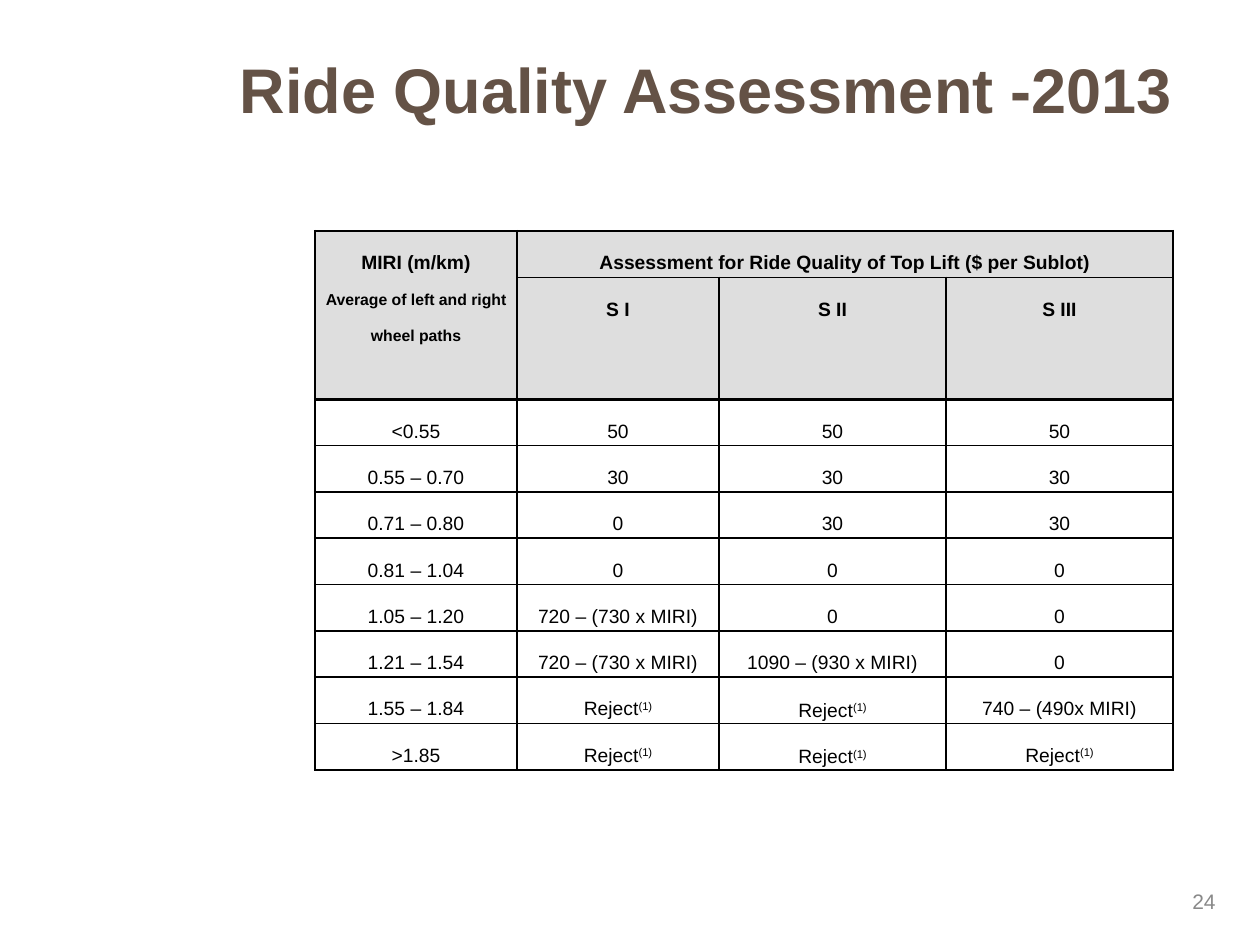
from lxml import etree
from pptx import Presentation
from pptx import util as u
from pptx.dml.color import RGBColor
from pptx.enum import text
from pptx.oxml.ns import qn

PX = 914400 / 126
FONT = "Arial"
BLACK = "000000"
COLUMNS = [202, 202, 227, 227]
ROWS = [46, 76] + [46] * 8
HEADER_ROWS = 2
REJECT = "Reject"
RATES = [
    ["<0.55", "50", "50", "50"],
    ["0.55 – 0.70", "30", "30", "30"],
    ["0.71 – 0.80", "0", "30", "30"],
    ["0.81 – 1.04", "0", "0", "0"],
    ["1.05 – 1.20", "720 – (730 x MIRI)", "0", "0"],
    ["1.21 – 1.54", "720 – (730 x MIRI)", "1090 – (930 x MIRI)", "0"],
    ["1.55 – 1.84", REJECT, REJECT, "740 – (490x MIRI)"],
    [">1.85", REJECT, REJECT, REJECT],
]


def px(value):
    return u.Emu(round(value * PX))


def colour(value):
    return RGBColor.from_string(value)


def add_span(para, words, size, ink=BLACK, bold=False):
    span = para.add_run()
    span.text = words
    span.font.name = FONT
    span.font.size = u.Pt(size)
    span.font.bold = bold
    span.font.color.rgb = colour(ink)
    return span


def place(shape, left, top, width, height):
    shape.left, shape.top = px(left), px(top)
    shape.width, shape.height = px(width), px(height)


def add_title(page, words):
    title = page.shapes.title
    place(title, 231, 38, 998, 158)
    frame = title.text_frame
    frame.word_wrap = True
    frame.auto_size = text.MSO_AUTO_SIZE.NONE
    frame.vertical_anchor = text.MSO_ANCHOR.TOP
    frame.margin_left = px(9)
    frame.margin_top = px(13)
    para = frame.paragraphs[0]
    para.alignment = text.PP_ALIGN.LEFT
    add_span(para, words, 36, "645246", True)


def add_page_number(page, number):
    box = page.shapes.add_textbox(px(1081), px(876), px(147), px(50))
    frame = box.text_frame
    frame.word_wrap = True
    frame.vertical_anchor = text.MSO_ANCHOR.MIDDLE
    para = frame.paragraphs[0]
    para.alignment = text.PP_ALIGN.RIGHT
    add_span(para, number, 12, "898989")


def set_borders(cell, row, column):
    """Heavy lines run round the table and below its header."""
    last_row = row + (cell.span_height - 1 if cell.is_merge_origin else 0)
    last_column = column + (cell.span_width - 1 if cell.is_merge_origin else 0)
    heavy = {
        "a:lnL": column == 0,
        "a:lnR": last_column == len(COLUMNS) - 1,
        "a:lnT": row in (0, HEADER_ROWS),
        "a:lnB": last_row in (HEADER_ROWS - 1, len(ROWS) - 1),
    }
    properties = cell._tc.get_or_add_tcPr()
    for tag, is_heavy in heavy.items():
        width = u.Pt(1.5 if is_heavy else 1)
        line = etree.SubElement(properties, qn(tag), w=str(int(width)))
        fill = etree.SubElement(line, qn("a:solidFill"))
        etree.SubElement(fill, qn("a:srgbClr"), val=BLACK)


def set_fill(cell, is_header):
    if not is_header:
        cell.fill.background()
        return
    cell.fill.solid()
    cell.fill.fore_color.rgb = colour("808080")
    shade = cell._tc.tcPr.find(".//" + qn("a:solidFill") + "[last()]")
    shade = cell._tc.tcPr.findall(qn("a:solidFill"))[0]
    etree.SubElement(shade[0], qn("a:alpha"), val="26000")


def cell_para(cell, centred=False):
    cell.margin_left = cell.margin_right = px(9)
    cell.margin_top = cell.margin_bottom = 0
    para = cell.text_frame.paragraphs[0]
    para.alignment = text.PP_ALIGN.CENTER
    para.line_spacing = 2.0
    if centred:
        cell.vertical_anchor = text.MSO_ANCHOR.MIDDLE
    else:
        para.space_before = para.space_after = u.Pt(4.8)
    return para


def fill_header(table):
    table.cell(0, 0).merge(table.cell(1, 0))
    table.cell(0, 1).merge(table.cell(0, 3))
    para = cell_para(table.cell(0, 0))
    add_span(para, "MIRI (m/km)", 11, bold=True)
    para.add_line_break()
    add_span(para, "Average of left and right wheel paths", 9, bold=True)
    heading = "Assessment for Ride Quality of Top Lift ($ per Sublot)"
    add_span(cell_para(table.cell(0, 1)), heading, 11, bold=True)
    for column, words in enumerate(["S I", "S II", "S III"], 1):
        add_span(cell_para(table.cell(1, column)), words, 11, bold=True)


def fill_rates(table):
    for row, rates in enumerate(RATES, HEADER_ROWS):
        for column, words in enumerate(rates):
            rejected = words == REJECT
            para = cell_para(table.cell(row, column), rejected and column == 2)
            add_span(para, words, 11)
            if rejected:
                note = add_span(para, "(1)", 11)
                note.font._element.set("baseline", "30000")


def add_rate_table(page):
    frame = page.shapes.add_table(len(ROWS), len(COLUMNS), px(315), px(231),
                                  px(sum(COLUMNS)), px(sum(ROWS)))
    table = frame.table
    table.first_row = table.horz_banding = False
    for column, width in zip(table.columns, COLUMNS):
        column.width = px(width)
    for row, height in zip(table.rows, ROWS):
        row.height = px(height)
    fill_header(table)
    fill_rates(table)
    for row in range(len(ROWS)):
        for column in range(len(COLUMNS)):
            cell = table.cell(row, column)
            set_borders(cell, row, column)
            set_fill(cell, row < HEADER_ROWS)


def main():
    deck = Presentation()
    deck.slide_width, deck.slide_height = px(1260), px(945)
    page = deck.slides.add_slide(deck.slide_layouts[5])
    add_title(page, "Ride Quality Assessment -2013")
    add_page_number(page, "24")
    add_rate_table(page)
    deck.save("out.pptx")


if __name__ == "__main__":
    main()
